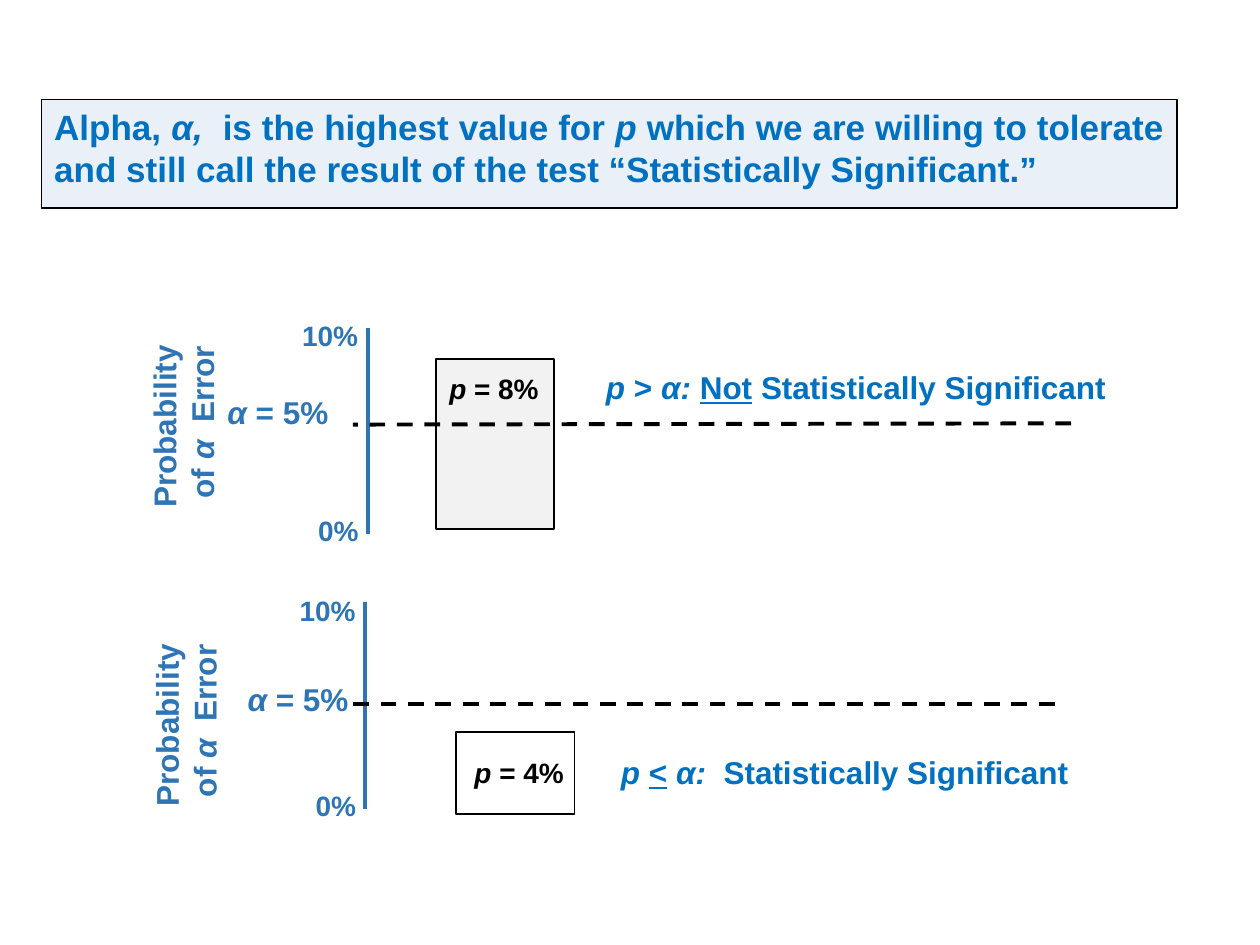
from dataclasses import dataclass

from lxml.etree import SubElement
from pptx import Presentation
from pptx.dml.color import RGBColor
from pptx.enum.dml import MSO_LINE
from pptx.enum.shapes import MSO_CONNECTOR, MSO_SHAPE
from pptx.enum.text import MSO_ANCHOR, MSO_AUTO_SIZE, PP_ALIGN
from pptx.oxml.ns import qn
from pptx.util import Inches, Pt

COLS, ROWS = 100, 75


@dataclass(frozen=True)
class Theme:
    font: str = "Arial"
    ink: str = "000000"
    axis: str = "2E75B6"
    claim: str = "0070C0"
    grey: str = "F2F2F2"
    head: int = 20
    body: int = 18
    small: int = 16
    thin: float = 1
    thick: float = 2.25


class Board:
    """Draws on one slide; places are columns and rows of its grid."""

    def __init__(self, deck, theme):
        self.theme = theme
        self.slide = deck.slides.add_slide(deck.slide_layouts[5])
        self.host = self.slide.shapes
        self.col = deck.slide_width / COLS
        self.row = deck.slide_height / ROWS

    def group(self):
        self.host = self.slide.shapes.add_group_shape().shapes

    def scale(self, *place):
        """Turn column, row pairs into lengths."""
        return [round(n * (self.row if i % 2 else self.col))
                for i, n in enumerate(place)]

    def fill_text(self, frame, paras, size, color, align):
        """Fill a frame; each run is (text, flags), flags i and u."""
        for n, runs in enumerate(paras):
            para = frame.paragraphs[0] if n == 0 else frame.add_paragraph()
            para.alignment = align
            for text, flags in runs:
                run = para.add_run()
                run.text = text
                style = {"name": self.theme.font, "size": Pt(size),
                         "bold": True, "italic": "i" in flags,
                         "underline": "u" in flags}
                for key, value in style.items():
                    setattr(run.font, key, value)
                run.font.color.rgb = RGBColor.from_string(color)

    def edge(self, shape, color, width):
        shape.line.color.rgb = RGBColor.from_string(color)
        shape.line.width = Pt(width)

    def title(self, place, runs):
        box = self.slide.shapes.title
        box.left, box.top, box.width, box.height = self.scale(*place)
        box.fill.solid()
        box.fill.fore_color.rgb = RGBColor.from_string(self.theme.axis)
        tint = box._element.spPr.find(".//" + qn("a:srgbClr"))
        SubElement(tint, qn("a:alpha"), val="10000")
        self.edge(box, self.theme.ink, self.theme.thin)
        frame = box.text_frame
        style = {"auto_size": MSO_AUTO_SIZE.NONE, "word_wrap": True,
                 "vertical_anchor": MSO_ANCHOR.TOP}
        for key, value in style.items():
            setattr(frame, key, value)
        self.fill_text(frame, [runs], self.theme.head, self.theme.claim,
                       PP_ALIGN.JUSTIFY)

    def label(self, place, paras, size, color, align=PP_ALIGN.CENTER, turn=0):
        box = self.host.add_textbox(*self.scale(*place))
        box.rotation = turn
        box.text_frame.word_wrap = True
        self.fill_text(box.text_frame, paras, size, color, align)

    def bar(self, place, fill):
        box = self.host.add_shape(MSO_SHAPE.RECTANGLE, *self.scale(*place))
        box.shadow.inherit = False
        if fill:
            box.fill.solid()
            box.fill.fore_color.rgb = RGBColor.from_string(fill)
        else:
            box.fill.background()
        self.edge(box, self.theme.ink, self.theme.thin)

    def line(self, ends, color, dash=None):
        line = self.host.add_connector(MSO_CONNECTOR.STRAIGHT,
                                       *self.scale(*ends))
        self.edge(line, color, self.theme.thick)
        line.line.dash_style = dash
        SubElement(line._element.spPr, qn("a:effectLst"))

    def panel(self, axis, bar, fill, limit, alpha, name, value, claim):
        """One axis with its bar, alpha limit and verdict."""
        look = self.theme
        x, y = axis
        self.group()
        self.bar(bar, fill)
        self.label(value[0], [[("p", "i"), (value[1], "")]],
                   look.small, look.ink)
        self.line((x, y, x, y + 16.4), look.axis)
        self.line(limit, look.ink, MSO_LINE.DASH)
        for text, left, top, width in (("10%", 6.8, -1.2, 7.6),
                                       ("0%", 5.2, 14.3, 5.7)):
            self.label((x - left, y + top, width, 3.7), [[(text, "")]],
                       look.small, look.axis)
        self.label((*alpha, 12.4, 4), [[("α ", "i"), ("= 5% ", "")]],
                   look.body, look.axis)
        self.label((*name, 20, 7.1),
                   [[("Probability", "")],
                    [(" of ", ""), ("α", "i"), ("  Error", "")]],
                   look.body, look.axis, turn=270)
        self.label(claim[0], [claim[1]], look.body, look.claim,
                   PP_ALIGN.LEFT)


def main():
    deck = Presentation()
    deck.slide_width, deck.slide_height = Inches(10), Inches(7.5)
    theme = Theme()
    board = Board(deck, theme)
    board.title((3.3, 7.9, 90.1, 8.6), [
        ("Alpha, ", ""), ("α,  ", "i"), ("is the highest value for ", ""),
        ("p", "i"),
        (" which we are willing to tolerate and still call the result "
         "of the test “Statistically Significant.”", "")])
    board.panel(
        axis=(29.2, 26), bar=(34.6, 28.5, 9.4, 13.5), fill=theme.grey,
        limit=(85, 33.6, 28, 33.7), alpha=(16.2, 30.7), name=(4.55, 30.3),
        value=((34.2, 29, 10, 3.7), " = 8%"),
        claim=((47.1, 28.7, 42.5, 4),
               [("p", "i"), (" > ", ""), ("α: ", "i"), ("Not", "u"),
                (" Statistically Significant", "")]))
    board.panel(
        axis=(29, 47.8), bar=(36.2, 58.1, 9.4, 6.5), fill=None,
        limit=(83.7, 55.9, 27.7, 55.9), alpha=(17.8, 53.5), name=(4.75, 54),
        value=((36.4, 59.5, 9.6, 3.7), " = 4%"),
        claim=((48.3, 59.3, 38.7, 4),
               [("p ", "i"), ("<", "u"), (" ", ""), ("α:  ", "i"),
                ("Statistically Significant", "")]))
    deck.save("out.pptx")


if __name__ == "__main__":
    main()
